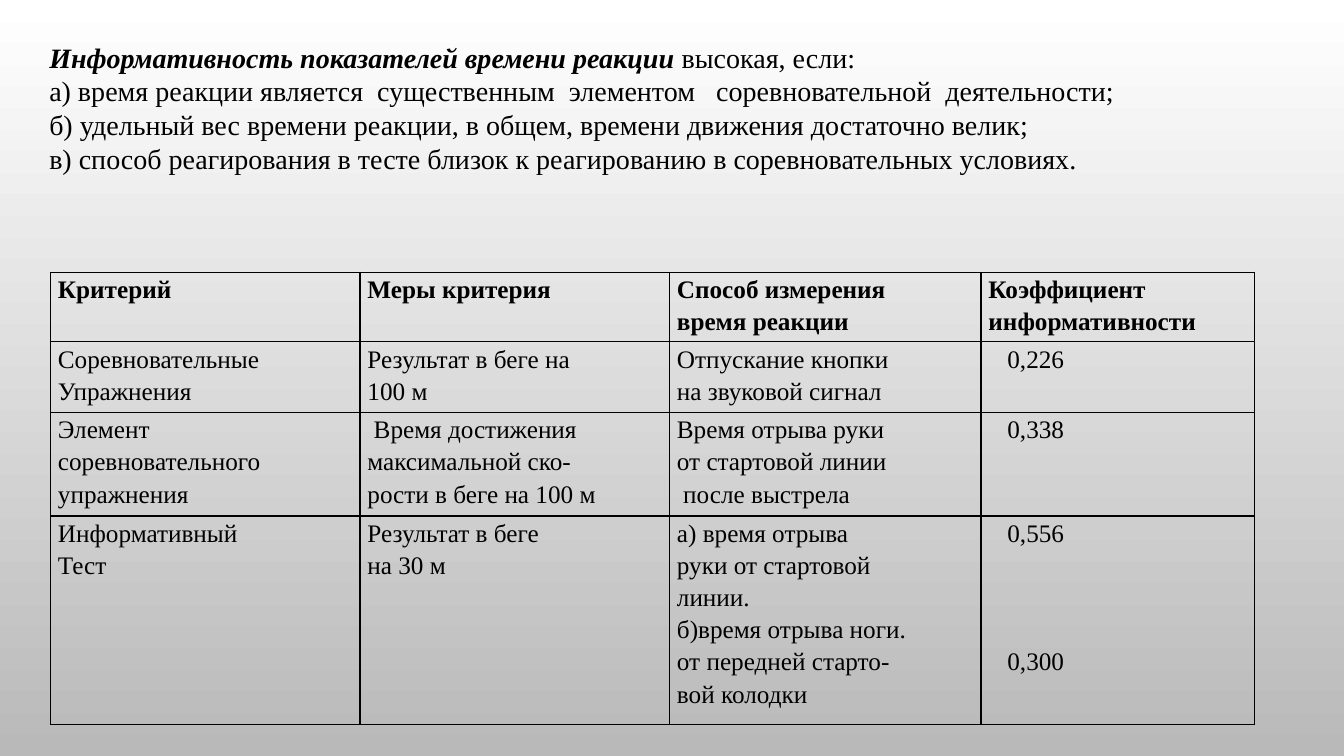
from lxml import etree
from pptx import Presentation
from pptx.dml.color import RGBColor
from pptx.enum.text import MSO_ANCHOR, MSO_AUTO_SIZE, PP_ALIGN
from pptx.oxml.ns import qn
from pptx.util import Inches, Pt

BLACK = RGBColor(0x00, 0x00, 0x00)
WHITE = RGBColor(0xFF, 0xFF, 0xFF)
GREY = RGBColor(0xB9, 0xB9, 0xB9)
FONT = "Times New Roman"
BORDER_SIDES = ("lnL", "lnR", "lnT", "lnB")

INTRO_TERM = "Информативность показателей времени реакции"
INTRO_LINES = [
    " высокая, если:",
    "а) время реакции является  существенным  элементом   соревновательной  деятельности;",
    "б) удельный вес времени реакции, в общем, времени движения достаточно велик;",
    "в) способ реагирования в тесте близок к реагированию в соревновательных условиях.",
]

COLUMN_WIDTHS = [3.07, 3.07, 3.09, 2.71]
ROW_HEIGHTS = [0.69, 0.7, 1.03, 2.07]
CELL_MARGIN = Pt(5.4)
VALUE_INDENT = Pt(13.5)
VALUE_GAP = Pt(68.6)
CRITERIA = [
    ["Критерий", "Меры критерия", "Способ измерения\nвремя реакции",
     "Коэффициент информативности"],
    ["Соревновательные\nУпражнения", "Результат в беге на\n100 м",
     "Отпускание кнопки\nна звуковой сигнал", "0,226"],
    ["Элемент соревновательного упражнения",
     " Время достижения\nмаксимальной ско-\nрости в беге на 100 м",
     "Время отрыва руки\nот стартовой линии\n после выстрела", "0,338"],
    ["Информативный\nТест", "Результат в беге\nна 30 м",
     "а) время отрыва\nруки от стартовой\nлинии.\nб)время отрыва ноги.\n"
     "от передней старто-\nвой колодки", "0,556\n0,300"],
]


def add_run(paragraph, text, size, bold=False, italic=False):
    run = paragraph.add_run()
    run.text = text
    run.font.color.rgb = BLACK
    font_format = {"name": FONT, "size": Pt(size), "bold": bold, "italic": italic}
    for name, value in font_format.items():
        setattr(run.font, name, value)


def add_paragraphs(text_frame, count):
    """Return the given number of paragraphs, the first being the existing one."""
    return [text_frame.paragraphs[0]] + [
        text_frame.add_paragraph() for _ in range(count - 1)]


def paint_background(slide):
    fill = slide.background.fill
    fill.gradient()
    fill.gradient_angle = 270
    for stop, position, color in zip(fill.gradient_stops, (0, 1), (WHITE, GREY)):
        stop.position = position
        stop.color.rgb = color


def add_intro(slide, left, top, width, height):
    text_frame = slide.shapes.add_textbox(
        Inches(left), Inches(top), Inches(width), Inches(height)).text_frame
    frame_format = {"word_wrap": True, "vertical_anchor": MSO_ANCHOR.MIDDLE,
                    "auto_size": MSO_AUTO_SIZE.SHAPE_TO_FIT_TEXT}
    for name, value in frame_format.items():
        setattr(text_frame, name, value)
    paragraphs = add_paragraphs(text_frame, len(INTRO_LINES))
    add_run(paragraphs[0], INTRO_TERM, 20, bold=True, italic=True)
    for paragraph, line in zip(paragraphs, INTRO_LINES):
        properties = paragraph._p.get_or_add_pPr()
        properties.set("marL", "0")
        properties.set("indent", str(Inches(0.49)))
        add_run(paragraph, line, 20)


def add_borders(cell):
    properties = cell._tc.get_or_add_tcPr()
    for index, side in enumerate(BORDER_SIDES):
        line = etree.Element(qn(f"a:{side}"), w=str(Pt(1)))
        fill = etree.SubElement(line, qn("a:solidFill"))
        etree.SubElement(fill, qn("a:srgbClr"), val=str(BLACK))
        properties.insert(index, line)


def fill_cell(cell, text, is_header, is_value):
    indent = VALUE_INDENT if is_value else 0
    cell_format = {"margin_left": CELL_MARGIN + indent,
                   "margin_right": CELL_MARGIN,
                   "margin_top": 0, "margin_bottom": 0}
    for name, value in cell_format.items():
        setattr(cell, name, value)
    cell.fill.background()
    add_borders(cell)
    lines = text.split("\n")
    paragraphs = add_paragraphs(cell.text_frame, len(lines))
    for index, (paragraph, line) in enumerate(zip(paragraphs, lines)):
        paragraph.alignment = PP_ALIGN.JUSTIFY
        paragraph.line_spacing = 1.15
        if is_value and index:
            paragraph.space_before = VALUE_GAP
        add_run(paragraph, line, 18, bold=is_header)


def add_criteria_table(slide, left, top):
    table = slide.shapes.add_table(
        len(ROW_HEIGHTS), len(COLUMN_WIDTHS), Inches(left), Inches(top),
        Inches(sum(COLUMN_WIDTHS)), Inches(sum(ROW_HEIGHTS))).table
    table.first_row = table.horz_banding = False
    for column, width in zip(table.columns, COLUMN_WIDTHS):
        column.width = Inches(width)
    for row, height in zip(table.rows, ROW_HEIGHTS):
        row.height = Inches(height)
    last_column = len(COLUMN_WIDTHS) - 1
    for row_index, texts in enumerate(CRITERIA):
        for column_index, text in enumerate(texts):
            is_header = row_index == 0
            is_value = column_index == last_column and not is_header
            fill_cell(table.cell(row_index, column_index), text, is_header, is_value)


def main():
    presentation = Presentation()
    presentation.slide_width = Inches(13.33)
    presentation.slide_height = Inches(7.5)
    slide = presentation.slides.add_slide(presentation.slide_layouts[6])
    paint_background(slide)
    add_criteria_table(slide, 0.5, 2.7)
    add_intro(slide, -0.1, 0.34, 12.12, 1.45)
    presentation.save("out.pptx")


if __name__ == "__main__":
    main()
